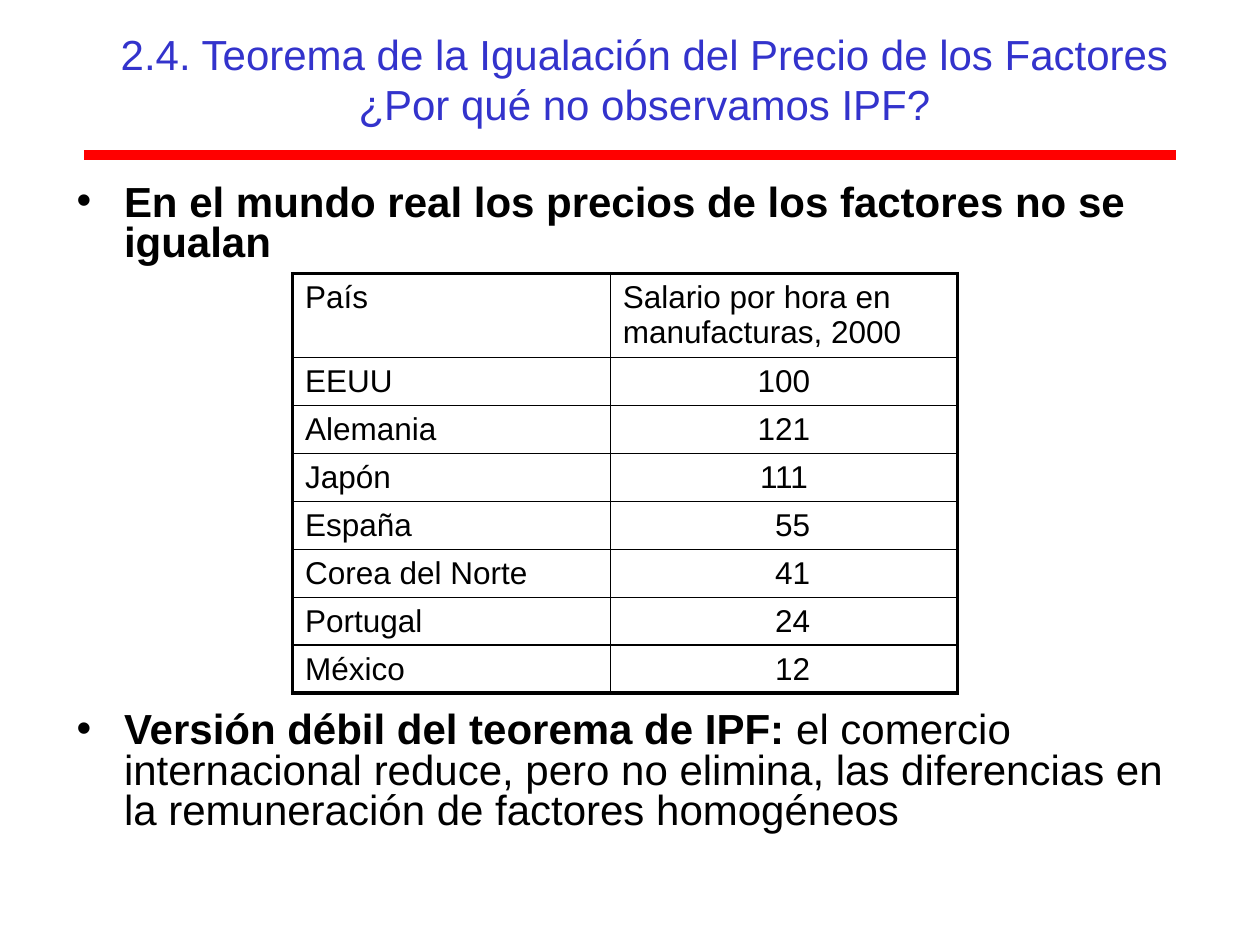
from pptx import Presentation
from pptx.dml.color import RGBColor
from pptx.enum.shapes import MSO_CONNECTOR
from pptx.enum.text import MSO_ANCHOR, PP_ALIGN
from pptx.oxml.ns import qn
from pptx.util import Pt
from lxml import etree

BLACK = RGBColor(0x00, 0x00, 0x00)
BLUE = RGBColor(0x33, 0x33, 0xCC)
RED = RGBColor(0xFF, 0x00, 0x00)
FONT = "Arial"
CENTER, LEFT = PP_ALIGN.CENTER, PP_ALIGN.LEFT

TITLE = ("2.4. Teorema de la Igualación del Precio de los Factores\v"
         "¿Por qué no observamos IPF?")
# Each bullet: space before, then (text, bold) spans
BULLETS = [
    (4.8, [("En el mundo real los precios de los factores no se igualan", True)]),
    (255.4, [("Versión débil del teorema de IPF:", True),
             (" el comercio internacional reduce, pero no elimina, las diferencias "
              "en la remuneración de factores homogéneos", False)]),
]
WAGES = [
    ("País", "Salario por hora en manufacturas, 2000"),
    ("EEUU", "100"),
    ("Alemania", "121"),
    ("Japón", "111"),
    ("España", "55"),
    ("Corea del Norte", "41"),
    ("Portugal", "24"),
    ("México", "12"),
]
COLUMN_WIDTHS = (181.6, 198.4)
HEADER_HEIGHT, ROW_HEIGHT = 48, 27.4
THICK, THIN = 2.25, 1
SIDE_MARGIN, TOP_MARGIN, BOTTOM_MARGIN = 7.2, 3.6, 1
DIGIT_WIDTH = 10
BULLET_INDENT = 27


def style(font, size, color=BLACK):
    font.name, font.size, font.color.rgb = FONT, Pt(size), color


def add_text_box(page, left, top, width, height):
    frame = page.shapes.add_textbox(Pt(left), Pt(top), Pt(width), Pt(height)).text_frame
    frame.word_wrap = True
    return frame


def add_title(page):
    frame = add_text_box(page, 36, 0, 664.6, 90)
    frame.vertical_anchor = MSO_ANCHOR.MIDDLE
    para = frame.paragraphs[0]
    para.text = TITLE
    para.alignment = CENTER
    style(para.font, 24, BLUE)


def add_rule(page):
    rule = page.shapes.add_connector(
        MSO_CONNECTOR.STRAIGHT, Pt(48), Pt(88.6), Pt(672), Pt(88.6))
    rule.line.color.rgb = RED
    rule.line.width = Pt(6)
    etree.SubElement(rule._element.spPr, qn("a:effectLst"))


def add_bullets(page):
    frame = add_text_box(page, 36.8, 102.2, 657.4, 411.8)
    for index, (space_before, spans) in enumerate(BULLETS):
        para = frame.add_paragraph() if index else frame.paragraphs[0]
        para.line_spacing = 0.8
        para.space_before = Pt(space_before)
        style(para.font, 24)
        for text, bold in spans:
            span = para.add_run()
            span.text = text
            span.font.bold = bold
        properties = para._p.get_or_add_pPr()
        properties.set("marL", str(Pt(BULLET_INDENT)))
        properties.set("indent", str(-Pt(BULLET_INDENT)))
        defaults = properties.find(qn("a:defRPr"))
        defaults.addprevious(etree.Element(qn("a:buFont"), typeface=FONT))
        defaults.addprevious(etree.Element(qn("a:buChar"), char="•"))


def set_borders(cell, widths):
    """Draw black borders, given as left, right, top, bottom widths."""
    properties = cell._tc.get_or_add_tcPr()
    for index, (side, width) in enumerate(zip("LRTB", widths)):
        line = etree.Element(qn(f"a:ln{side}"), w=str(Pt(width)))
        fill = etree.SubElement(line, qn("a:solidFill"))
        etree.SubElement(fill, qn("a:srgbClr"), val=str(BLACK))
        properties.insert(index, line)


def add_wage_table(page):
    last_row, last_column = len(WAGES) - 1, len(COLUMN_WIDTHS) - 1
    heights = [HEADER_HEIGHT] + [ROW_HEIGHT] * last_row
    table = page.shapes.add_table(
        len(WAGES), len(COLUMN_WIDTHS), Pt(167.2), Pt(156.4),
        Pt(sum(COLUMN_WIDTHS)), Pt(sum(heights))).table
    table.first_row = table.horz_banding = False
    for column, width in zip(table.columns, COLUMN_WIDTHS):
        column.width = Pt(width)
    for row, (values, height) in enumerate(zip(WAGES, heights)):
        table.rows[row].height = Pt(height)
        for column, text in enumerate(values):
            cell = table.cell(row, column)
            cell.fill.background()
            cell.margin_top, cell.margin_bottom = Pt(TOP_MARGIN), Pt(BOTTOM_MARGIN)
            is_number = row > 0 and column > 0
            # Two-digit numbers move right so that the units line up
            missing_digits = 3 - len(text) if is_number else 0
            cell.margin_left = Pt(SIDE_MARGIN + DIGIT_WIDTH * missing_digits)
            para = cell.text_frame.paragraphs[0]
            para.text = text
            para.alignment = CENTER if is_number else LEFT
            style(para.font, 18)
            outer = (column == 0, column == last_column, row == 0, row == last_row)
            set_borders(cell, [THICK if edge else THIN for edge in outer])


def main():
    deck = Presentation()
    deck.slide_width, deck.slide_height = Pt(720), Pt(540)
    page = deck.slides.add_slide(deck.slide_layouts[6])
    add_rule(page)
    add_title(page)
    add_bullets(page)
    add_wage_table(page)
    deck.save("out.pptx")


if __name__ == "__main__":
    main()
